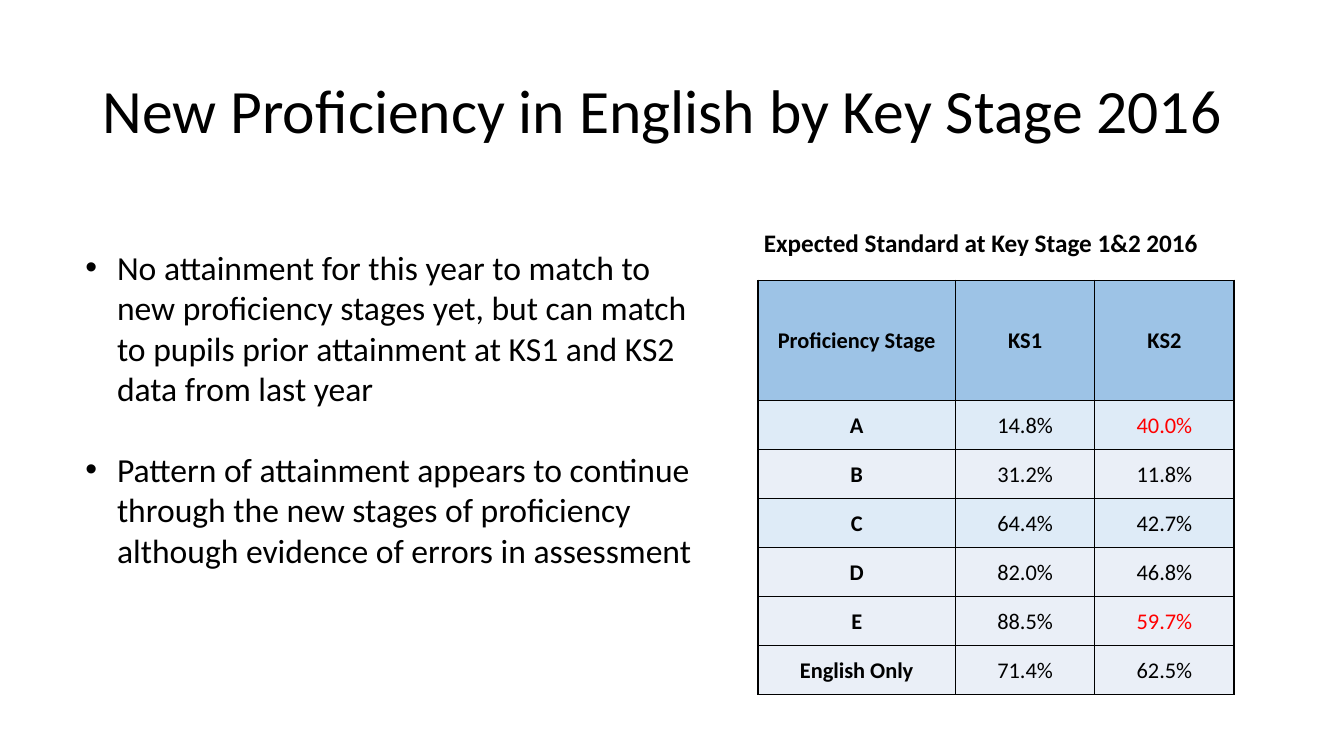
from dataclasses import dataclass

from lxml.etree import SubElement
from pptx import Presentation
from pptx.dml.color import RGBColor
from pptx.enum.text import MSO_ANCHOR, PP_ALIGN
from pptx.oxml.ns import qn
from pptx.slide import Slide
from pptx.table import _Cell
from pptx.text.text import TextFrame, _Paragraph
from pptx.util import Cm, Pt


@dataclass(frozen=True)
class Theme:
    font: str = "Calibri"
    ink: str = "000000"
    alert: str = "FF0000"
    header_fill: str = "9DC3E6"
    band_fill: str = "DEEBF7"
    plain_fill: str = "EAEFF7"
    title_size: int = 44
    body_size: int = 24
    caption_size: int = 18
    table_size: int = 16
    border_width: int = 1


@dataclass(frozen=True)
class Box:
    left: float
    top: float
    width: float
    height: float

    def lengths(self) -> tuple[Cm, Cm, Cm, Cm]:
        return Cm(self.left), Cm(self.top), Cm(self.width), Cm(self.height)


@dataclass(frozen=True)
class StageResult:
    stage: str
    ks1: str
    ks2: str
    fill: str
    ks2_color: str


THEME = Theme()

TITLE = "New Proficiency in English by Key Stage 2016"
CAPTION = "Expected Standard at Key Stage 1&2 2016"
FINDINGS = (
    "No attainment for this year to match to new proficiency stages yet, "
    "but can match to pupils prior attainment at KS1 and KS2 data from last year",
    "Pattern of attainment appears to continue through the new stages of "
    "proficiency although evidence of errors in assessment",
)
HEADINGS = ("Proficiency Stage", "KS1", "KS2")
RESULTS = (
    StageResult("A", "14.8%", "40.0%", THEME.band_fill, THEME.alert),
    StageResult("B", "31.2%", "11.8%", THEME.plain_fill, THEME.ink),
    StageResult("C", "64.4%", "42.7%", THEME.band_fill, THEME.ink),
    StageResult("D", "82.0%", "46.8%", THEME.plain_fill, THEME.ink),
    StageResult("E", "88.5%", "59.7%", THEME.plain_fill, THEME.alert),
    StageResult("English Only", "71.4%", "62.5%", THEME.plain_fill, THEME.ink),
)

TITLE_BOX = Box(2.34, 1.02, 29.21, 3.68)
CAPTION_BOX = Box(19, 5.61, 13.28, 1.02)
FINDINGS_BOX = Box(1.9, 6.1, 16.1, 11.53)
TABLE_BOX = Box(19.1, 7.06, 12, 10.44)
COLUMN_WIDTHS = (4.98, 3.51, 3.51)
HEADER_HEIGHT = 3.03
BULLET_INDENT = 0.8


def write(paragraph: _Paragraph, text: str, *, size: int, bold: bool = False,
          color: str = THEME.ink, align: PP_ALIGN = PP_ALIGN.LEFT,
          line_spacing: float = 1.0) -> None:
    paragraph.alignment = align
    paragraph.line_spacing = line_spacing
    run = paragraph.add_run()
    run.text = text
    run.font.name = THEME.font
    run.font.size = Pt(size)
    run.font.bold = bold
    run.font.color.rgb = RGBColor.from_string(color)


def add_text_frame(slide: Slide, box: Box,
                   anchor: MSO_ANCHOR = MSO_ANCHOR.TOP) -> TextFrame:
    frame = slide.shapes.add_textbox(*box.lengths()).text_frame
    frame.word_wrap = True
    frame.vertical_anchor = anchor
    return frame


def add_bullet(paragraph: _Paragraph) -> None:
    properties = paragraph._p.get_or_add_pPr()
    properties.set("marL", str(Cm(BULLET_INDENT)))
    properties.set("indent", str(-Cm(BULLET_INDENT)))
    SubElement(properties, qn("a:buFont"), typeface="Arial")
    SubElement(properties, qn("a:buChar"), char="•")


def add_findings(slide: Slide) -> None:
    frame = add_text_frame(slide, FINDINGS_BOX)
    for index, finding in enumerate(FINDINGS):
        paragraph = frame.add_paragraph() if index else frame.paragraphs[0]
        write(paragraph, finding, size=THEME.body_size)
        if index:
            paragraph.space_before = Pt(29)
        add_bullet(paragraph)


def format_cell(cell: _Cell, fill: str) -> None:
    cell.vertical_anchor = MSO_ANCHOR.MIDDLE
    cell.margin_left = cell.margin_right = cell.margin_top = Cm(0.03)
    cell.margin_bottom = Cm(0)
    # Borders come before the fill in the cell properties
    properties = cell._tc.get_or_add_tcPr()
    for side in ("a:lnL", "a:lnR", "a:lnT", "a:lnB"):
        line = SubElement(properties, qn(side), w=str(Pt(THEME.border_width)))
        SubElement(SubElement(line, qn("a:solidFill")), qn("a:srgbClr"), val=THEME.ink)
    cell.fill.solid()
    cell.fill.fore_color.rgb = RGBColor.from_string(fill)


def add_results_table(slide: Slide) -> None:
    table = slide.shapes.add_table(
        len(RESULTS) + 1, len(HEADINGS), *TABLE_BOX.lengths()).table
    for column, width in zip(table.columns, COLUMN_WIDTHS):
        column.width = Cm(width)
    result_height = (TABLE_BOX.height - HEADER_HEIGHT) / len(RESULTS)
    for index, row in enumerate(table.rows):
        row.height = Cm(result_height if index else HEADER_HEIGHT)

    def fill_cell(row: int, column: int, text: str, fill: str, color: str) -> None:
        cell = table.cell(row, column)
        format_cell(cell, fill)
        write(cell.text_frame.paragraphs[0], text, size=THEME.table_size,
              bold=row == 0 or column == 0, color=color, align=PP_ALIGN.CENTER)

    for column, heading in enumerate(HEADINGS):
        fill_cell(0, column, heading, THEME.header_fill, THEME.ink)
    for row, result in enumerate(RESULTS, start=1):
        fill_cell(row, 0, result.stage, result.fill, THEME.ink)
        fill_cell(row, 1, result.ks1, result.fill, THEME.ink)
        fill_cell(row, 2, result.ks2, result.fill, result.ks2_color)


def main() -> None:
    presentation = Presentation()
    presentation.slide_width, presentation.slide_height = Cm(33.87), Cm(19.05)
    slide = presentation.slides.add_slide(presentation.slide_layouts[6])

    # Title
    title = add_text_frame(slide, TITLE_BOX, MSO_ANCHOR.MIDDLE)
    write(title.paragraphs[0], TITLE, size=THEME.title_size, line_spacing=0.9)

    # Results by proficiency stage
    add_results_table(slide)
    caption = add_text_frame(slide, CAPTION_BOX)
    write(caption.paragraphs[0], CAPTION, size=THEME.caption_size, bold=True)

    # Findings
    add_findings(slide)

    presentation.save("out.pptx")


if __name__ == "__main__":
    main()
